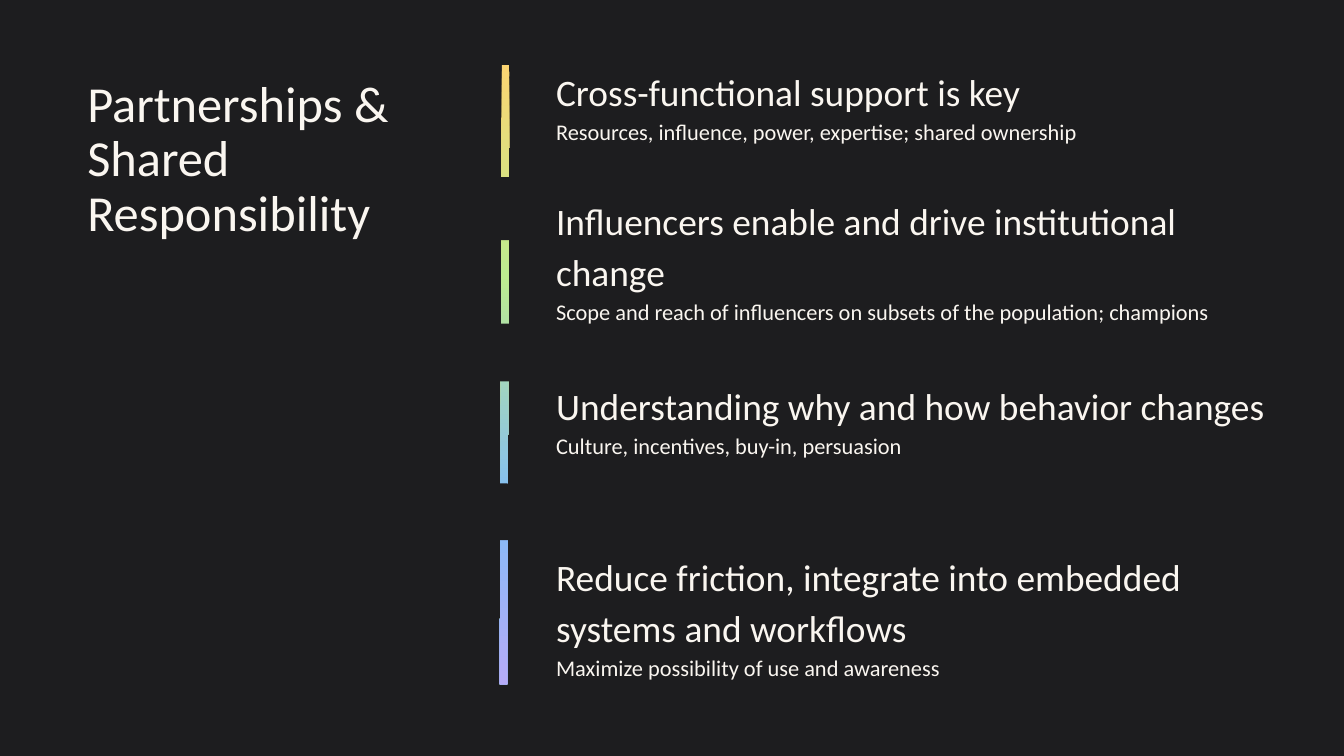
import copy

import pptx
import pptx.dml.color
import pptx.enum.shapes
import pptx.enum.text
import pptx.util

Cm = pptx.util.Cm
COLORS = {
    "background": "1D1D1F",
    "text": "FAF6F0",
    "yellow": "FBD572",
    "green": "BDEC90",
    "blue": "82BCF6",
    "violet": "B6ABF7",
}
BAR_STOPS = [(0, "yellow"), (0.34, "green"), (0.71, "blue"), (1, "violet")]
TILT = 0.2

# Top in cm, heading, detail
POINTS = [
    (1.19, "Cross-functional support is key",
     "Resources, influence, power, expertise; shared ownership"),
    (3.61, "Influencers enable and drive institutional change",
     "Scope and reach of influencers on subsets of the population; champions"),
    (7.11, "Understanding why and how behavior changes",
     "Culture, incentives, buy-in, persuasion"),
    (10.34, "Reduce friction, integrate into embedded systems and workflows",
     "Maximize possibility of use and awareness"),
]
# Left, top and height in cm of the covers that part the bar
GAPS = [(8.66, 3.35, 1.19), (8.84, 6.12, 1.09), (8.69, 9.14, 1.07)]


def rgb(name):
    return pptx.dml.color.RGBColor.from_string(COLORS[name])


class SlideBuilder:
    font = "Calibri"

    def __init__(self, slide):
        self.slide = slide
        slide.background.fill.solid()
        slide.background.fill.fore_color.rgb = rgb("background")

    def text(self, place, lines, spacing, insets, anchor):
        """Add a text box with one paragraph for each (words, size) pair."""
        box = self.slide.shapes.add_textbox(*map(Cm, place))
        frame = box.text_frame
        frame.word_wrap = True
        frame.vertical_anchor = anchor
        (frame.margin_left, frame.margin_top,
         frame.margin_right, frame.margin_bottom) = map(Cm, insets)
        for index, (words, size) in enumerate(lines):
            para = frame.add_paragraph() if index else frame.paragraphs[0]
            para.line_spacing = spacing
            span = para.add_run()
            span.text = words
            span.font.name = self.font
            span.font.size = pptx.util.Pt(size)
            span.font.color.rgb = rgb("text")

    def rectangle(self, place, rotation):
        shape = self.slide.shapes.add_shape(
            pptx.enum.shapes.MSO_SHAPE.RECTANGLE, *map(Cm, place))
        shape.rotation = rotation
        shape.shadow.inherit = False
        shape.line.fill.background()
        return shape

    def cover(self, place):
        shape = self.rectangle(place, TILT)
        shape.fill.solid()
        shape.fill.fore_color.rgb = rgb("background")

    def gradient_bar(self, place, stops):
        fill = self.rectangle(place, 90 + TILT).fill
        fill.gradient()
        fill.gradient_angle = 0
        stop_list = fill._fill._gradFill.gsLst
        while len(stop_list) < len(stops):
            stop_list.append(copy.deepcopy(stop_list[0]))
        for stop, (position, name) in zip(fill.gradient_stops, stops):
            stop.position = position
            stop.color.rgb = rgb(name)


def main():
    deck = pptx.Presentation()
    deck.slide_width, deck.slide_height = Cm(25.4), Cm(14.29)
    builder = SlideBuilder(deck.slides.add_slide(deck.slide_layouts[6]))
    anchors = pptx.enum.text.MSO_ANCHOR

    builder.text((1.47, 2.03, 6.63, 2.01),
                 [("Partnerships & Shared Responsibility", 27)],
                 0.9, (0.18, 0.1, 0.18, 0.1), anchors.MIDDLE)
    for top, heading, detail in POINTS:
        builder.text((10.41, top, 13.77, 2.41), [(heading, 20), (detail, 12)],
                     1.15, (0.1, 0, 0.25, 0), anchors.TOP)

    builder.gradient_bar((3.68, 7.01, 11.71, 0.14), BAR_STOPS)
    for left, top, height in GAPS:
        builder.cover((left, top, 1.7, height))
    deck.save("out.pptx")


if __name__ == "__main__":
    main()
